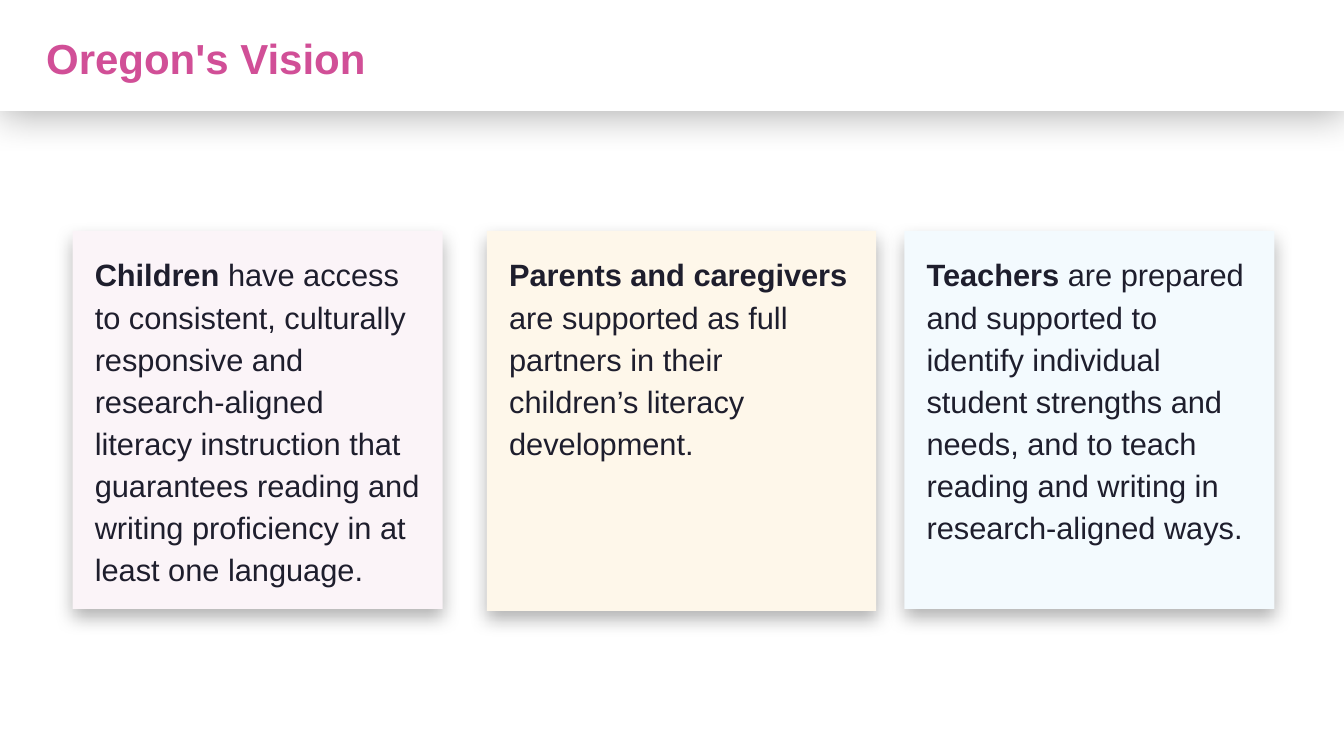
from lxml import etree
from pptx import Presentation
from pptx.dml.color import RGBColor
from pptx.enum.shapes import MSO_SHAPE
from pptx.enum.text import MSO_ANCHOR, PP_ALIGN
from pptx.oxml.ns import qn
from pptx.util import Inches, Pt

RECTANGLE = MSO_SHAPE.RECTANGLE
TOP, MIDDLE = MSO_ANCHOR.TOP, MSO_ANCHOR.MIDDLE
LEFT = PP_ALIGN.LEFT

FONT = "Arial"
COLORS = {
    "white": "FFFFFF",
    "title": "D14F97",
    "text": "1E1E2D",
    "shadow": "000000",
    "children": "FBF4F8",
    "parents": "FEF7EA",
    "teachers": "F3FAFE",
}
CARD_TOP = 2.29
# left, width, height, fill, bold lead, remaining text
CARDS = [
    (0.72, 3.67, 3.75, "children", "Children",
     " have access to consistent, culturally responsive and research-aligned "
     "literacy instruction that guarantees reading and writing proficiency "
     "in at least one language."),
    (4.83, 3.86, 3.77, "parents", "Parents and caregivers ",
     "are supported as full partners in their children’s literacy development."),
    (8.97, 3.67, 3.75, "teachers", "Teachers",
     " are prepared and supported to identify individual student strengths "
     "and needs, and to teach reading and writing in research-aligned ways."),
]


def color(name):
    return RGBColor.from_string(COLORS[name])


def add_shadow(shape, blur, distance):
    """Give the shape a soft black shadow that falls straight down."""
    shape.shadow.inherit = False
    effects = shape._element.spPr.find(qn("a:effectLst"))
    shadow = etree.SubElement(
        effects, qn("a:outerShdw"), blurRad=str(Pt(blur)),
        dist=str(Pt(distance)), dir="5400000", algn="t", rotWithShape="0")
    tint = etree.SubElement(shadow, qn("a:srgbClr"), val=COLORS["shadow"])
    etree.SubElement(tint, qn("a:alpha"), val="30000")


def add_panel(page, left, top, width, height, fill, blur, distance):
    """Add a borderless filled rectangle with a shadow."""
    panel = page.shapes.add_shape(
        RECTANGLE, Inches(left), Inches(top), Inches(width), Inches(height))
    panel.fill.solid()
    panel.fill.fore_color.rgb = color(fill)
    panel.line.fill.background()
    add_shadow(panel, blur, distance)
    return panel


def format_span(span, size, fill, bold):
    span.font.name = FONT
    span.font.size = Pt(size)
    span.font.bold = bold
    span.font.color.rgb = color(fill)


def add_title(page, text):
    box = page.shapes.add_textbox(
        Inches(0.36), Inches(0.27), Inches(12.67), Inches(0.61))
    frame = box.text_frame
    frame.word_wrap = True
    frame.vertical_anchor = MIDDLE
    frame.text = text
    format_span(frame.paragraphs[0].runs[0], 30, "title", True)


def add_card(page, left, width, height, fill, lead, rest):
    card = add_panel(page, left, CARD_TOP, width, height, fill, 13, 6)
    frame = card.text_frame
    frame.word_wrap = True
    frame.vertical_anchor = TOP
    frame.margin_left = frame.margin_right = Inches(0.2)
    frame.margin_top = frame.margin_bottom = Inches(0.2)
    para = frame.paragraphs[0]
    para.alignment = LEFT
    para.line_spacing = 1.14
    para._p.get_or_add_pPr().set("marL", str(Inches(0.02)))
    for text, bold in ((lead, True), (rest, False)):
        span = para.add_run()
        span.text = text
        format_span(span, 22, "text", bold)


def main():
    deck = Presentation()
    deck.slide_width, deck.slide_height = Inches(13.33), Inches(7.5)
    page = deck.slides.add_slide(deck.slide_layouts[6])
    add_panel(page, 0, 0, 13.33, 1.1, "white", 28, 3)
    add_title(page, "Oregon's Vision")
    for card in CARDS:
        add_card(page, *card)
    deck.save("out.pptx")


if __name__ == "__main__":
    main()
